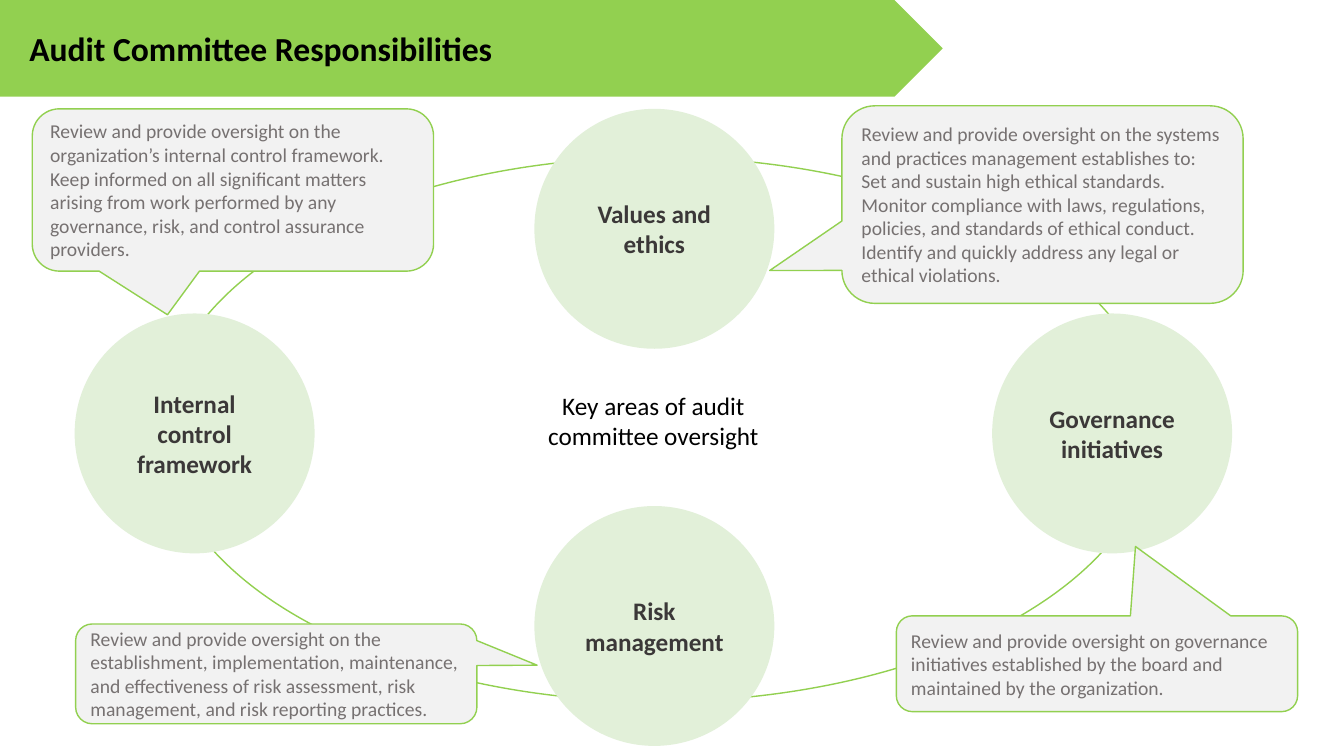
from pptx import Presentation
from pptx.dml.color import RGBColor
from pptx.enum.shapes import MSO_SHAPE
from pptx.enum.text import MSO_ANCHOR, MSO_AUTO_SIZE, PP_ALIGN
from pptx.util import Inches, Pt

# Grid: 133.3 columns by 75 rows of square cells
COLS, ROWS = 133.3, 75
WIDE, HIGH = Inches(13.33), Inches(7.5)

GREEN, PALE, GREY = "92D050", "E2F0D9", "F2F2F2"
BLACK, DARK, SOFT = "000000", "3B3838", "767171"

# Circles: two facing pairs, as left and top cells
SIZE = 23.8
MID, LEFT, RIGHT = 53, 7.4, 98.4
TOP, LEVEL, LOW = 10.8, 31.1, 50.2
TOPICS = [
    ("Values and ethics", MID, TOP),
    ("Risk management", MID, LOW),
    ("Internal control framework", LEFT, LEVEL),
    ("Governance initiatives", RIGHT, LEVEL),
]

# Callouts: left, top, height, pointer tip, paragraphs
SPAN = 39.8
NOTES = [
    (83.5, 10.5, 19.6, (-0.68, 0.334), [
        "Review and provide oversight on the systems and practices "
        "management establishes to:",
        "Set and sustain high ethical standards.",
        "Monitor compliance with laws, regulations, policies, and "
        "standards of ethical conduct.",
        "Identify and quickly address any legal or ethical violations.",
    ]),
    (88.9, 61.1, 9.5, (0.096, -1.225), [
        "Review and provide oversight on governance initiatives "
        "established by the board and maintained by the organization.",
    ]),
    (7.5, 61.9, 9.9, (0.65, -0.087), [
        "Review and provide oversight on the establishment, "
        "implementation, maintenance, and effectiveness of risk "
        "assessment, risk management, and risk reporting practices.",
    ]),
    (3.2, 10.8, 16.1, (-0.163, 0.769), [
        "Review and provide oversight on the organization’s internal "
        "control framework. Keep informed on all significant matters "
        "arising from work performed by any governance, risk, and "
        "control assurance providers.",
    ]),
]


def color(fmt, code):
    fmt.rgb = RGBColor.from_string(code)


def place(x, y, w, h):
    """Turn grid cells into slide lengths."""
    return (int(WIDE * x / COLS), int(HIGH * y / ROWS),
            int(WIDE * w / COLS), int(HIGH * h / ROWS))


def write(shape, *lines, size=18, tone=BLACK, bold=False,
          align=PP_ALIGN.LEFT, anchor=MSO_ANCHOR.MIDDLE):
    frame = shape.text_frame
    frame.text = "\n".join(lines)
    frame.word_wrap = True
    frame.auto_size = MSO_AUTO_SIZE.NONE
    frame.vertical_anchor = anchor
    for para in frame.paragraphs:
        para.alignment = align
        for run in para.runs:
            font = run.font
            font.name, font.size, font.bold = "Calibri", Pt(size), bold
            color(font.color, tone)


def draw(slide, kind, box, fill=None, line=None):
    shape = slide.shapes.add_shape(kind, *place(*box))
    shape.shadow.inherit = False
    if fill:
        shape.fill.solid()
        color(shape.fill.fore_color, fill)
    else:
        shape.fill.background()
    if line:
        color(shape.line.color, line)
        shape.line.width = Pt(1)
    else:
        shape.line.fill.background()
    return shape


def head(slide, text):
    box = (0, 0, 93.5, 9.6)
    band = draw(slide, MSO_SHAPE.PENTAGON, box, GREEN)
    title = slide.shapes.title
    title.left, title.top, title.width, title.height = place(*box)
    write(title, text, size=24, bold=True)
    title.text_frame.margin_left = place(2.9, 0, 0, 0)[0]
    # The title stands in front of its band
    band.element.addnext(title.element)


def topic(slide, text, x, y):
    disc = draw(slide, MSO_SHAPE.OVAL, (x, y, SIZE, SIZE), PALE)
    write(disc, text, tone=DARK, bold=True, align=PP_ALIGN.CENTER)


def note(slide, x, y, h, tip, lines):
    shape = draw(slide, MSO_SHAPE.ROUNDED_RECTANGULAR_CALLOUT,
                 (x, y, SPAN, h), GREY, GREEN)
    for i, value in enumerate((*tip, 0.167)):
        shape.adjustments[i] = value
    write(shape, *lines, size=14, tone=SOFT)


def main():
    deck = Presentation()
    deck.slide_width, deck.slide_height = WIDE, HIGH
    slide = deck.slides.add_slide(deck.slide_layouts[5])

    # Ring and heading
    draw(slide, MSO_SHAPE.OVAL, (16, 15.6, 98.6, 54), line=GREEN)
    head(slide, "Audit Committee Responsibilities")

    # Centre label
    label = slide.shapes.add_textbox(*place(50.5, 38.2, 28.6, 7.1))
    write(label, "Key areas of audit committee oversight",
          align=PP_ALIGN.CENTER, anchor=MSO_ANCHOR.TOP)

    # Circles, then the callouts over them
    for item in TOPICS:
        topic(slide, *item)
    for item in NOTES:
        note(slide, *item)

    deck.save("out.pptx")


if __name__ == "__main__":
    main()
